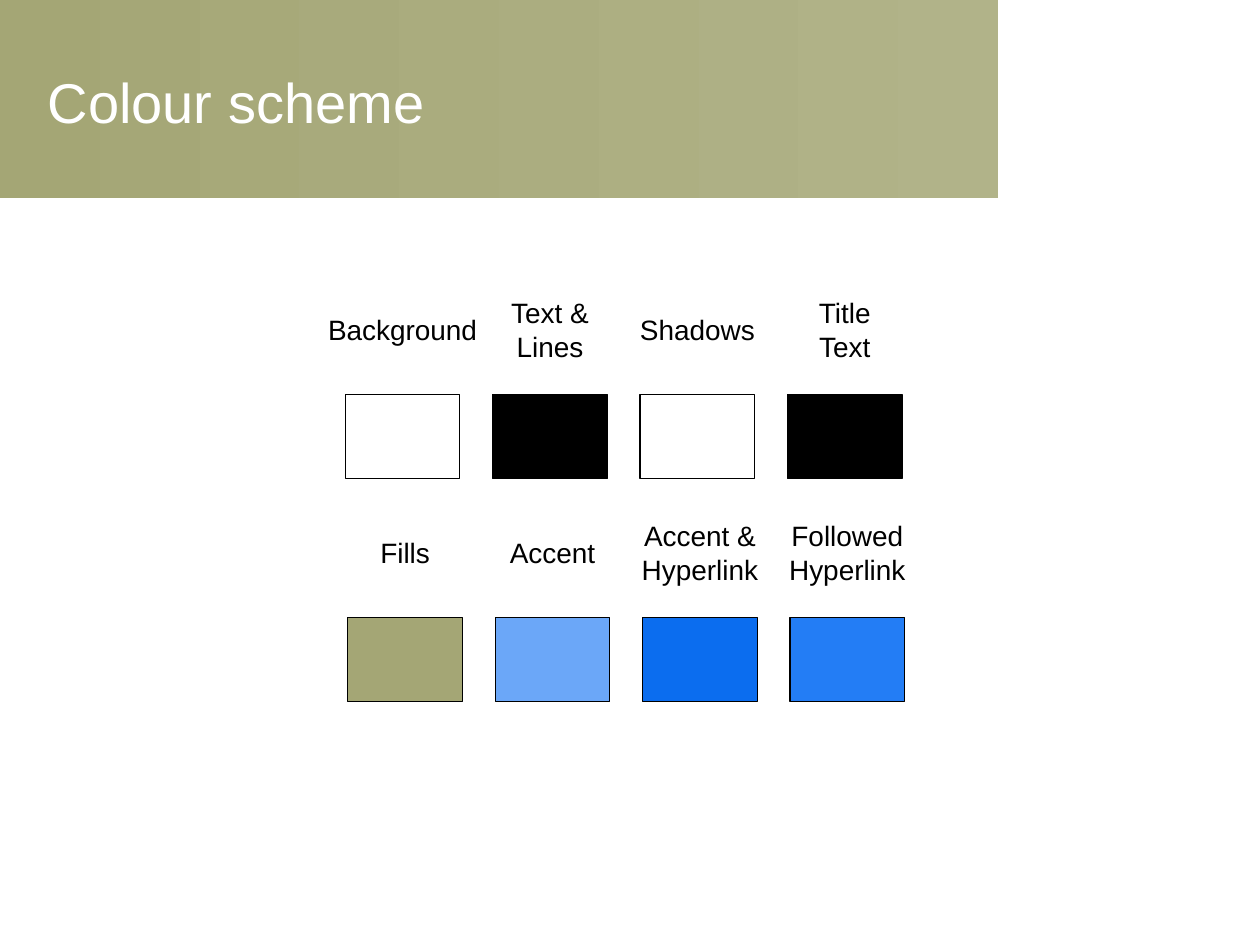
from pptx import Presentation
from pptx.dml.color import RGBColor
from pptx.enum.shapes import MSO_SHAPE as Shape
from pptx.enum.text import MSO_ANCHOR as Anchor, MSO_AUTO_SIZE as AutoSize, PP_ALIGN as Align
from pptx.util import Inches, Pt

SWATCH_WIDTH, SWATCH_HEIGHT, COLUMN_STEP = 0.91, 0.67, 1.17
ROWS = [
    (2.74, 3.13, 2.62, [
        ("Background", 1.39, "FFFFFF"),
        ("Text &\nLines", 0.84, "000000"),
        ("Shadows", 1.11, "FFFFFF"),
        ("Title\vText", 0.63, "000000"),
    ]),
    (2.76, 4.9, 4.39, [
        ("Fills", 0.59, "A4A675"),
        ("Accent", 0.88, "6BA7F8"),
        ("Accent &\nHyperlink", 1.12, "0B6DEF"),
        ("Followed\nHyperlink", 1.12, "237DF5"),
    ]),
]


def color(value):
    """Return the colour for a hex string."""
    return RGBColor.from_string(value)


def apply_format(target, values):
    """Set each attribute of the target from a dict."""
    for name, value in values.items():
        setattr(target, name, value)


def add_rectangle(slide, left, top, width, height):
    """Add a rectangle without a shadow."""
    shape = slide.shapes.add_shape(
        Shape.RECTANGLE, Inches(left), Inches(top), Inches(width), Inches(height))
    shape.shadow.inherit = False
    return shape


def add_banner(slide):
    """Add the title band, which fades to the right."""
    banner = add_rectangle(slide, 0, 0, 7.92, 1.57)
    banner.line.fill.background()
    banner.fill.gradient()
    banner.fill.gradient_angle = 0
    for stop, value in zip(banner.fill.gradient_stops, ("A4A675", "B1B389")):
        stop.color.rgb = color(value)


def add_swatch(slide, left, top, fill):
    """Add one outlined colour sample."""
    swatch = add_rectangle(slide, left, top, SWATCH_WIDTH, SWATCH_HEIGHT)
    swatch.fill.solid()
    swatch.fill.fore_color.rgb = color(fill)
    swatch.line.color.rgb = color("000000")
    swatch.line.width = Pt(0.75)


def add_text(slide, text, left, top, width, height, size, value, align, frame_format):
    """Add a text box with one style for all its paragraphs."""
    box = slide.shapes.add_textbox(
        Inches(left), Inches(top), Inches(width), Inches(height))
    apply_format(box.text_frame, frame_format)
    box.text_frame.text = text
    for paragraph in box.text_frame.paragraphs:
        paragraph.alignment = align
        for run in paragraph.runs:
            apply_format(run.font, {"name": "Arial", "size": Pt(size)})
            run.font.color.rgb = color(value)


def add_label(slide, text, center, middle, width):
    """Add a swatch name centred on a point."""
    height = 0.37 if len(text.splitlines()) == 1 else 0.64
    add_text(slide, text, center - width / 2, middle - height / 2, width, height,
             16, "000000", Align.CENTER,
             {"word_wrap": False, "auto_size": AutoSize.SHAPE_TO_FIT_TEXT,
              "margin_left": 0, "margin_right": 0})


def main():
    """Build the colour scheme slide."""
    presentation = Presentation()
    apply_format(presentation, {"slide_width": Inches(10), "slide_height": Inches(7.5)})
    slide = presentation.slides.add_slide(presentation.slide_layouts[6])
    add_banner(slide)
    add_text(slide, "Colour scheme", 0.28, 0.3, 7.48, 1.01, 32, "FFFFFF", Align.LEFT,
             {"word_wrap": True, "vertical_anchor": Anchor.MIDDLE})
    for row_left, swatch_top, label_middle, entries in ROWS:
        for column, (name, width, fill) in enumerate(entries):
            left = row_left + column * COLUMN_STEP
            add_swatch(slide, left, swatch_top, fill)
            add_label(slide, name, left + SWATCH_WIDTH / 2, label_middle, width)
    presentation.save("out.pptx")


if __name__ == "__main__":
    main()
